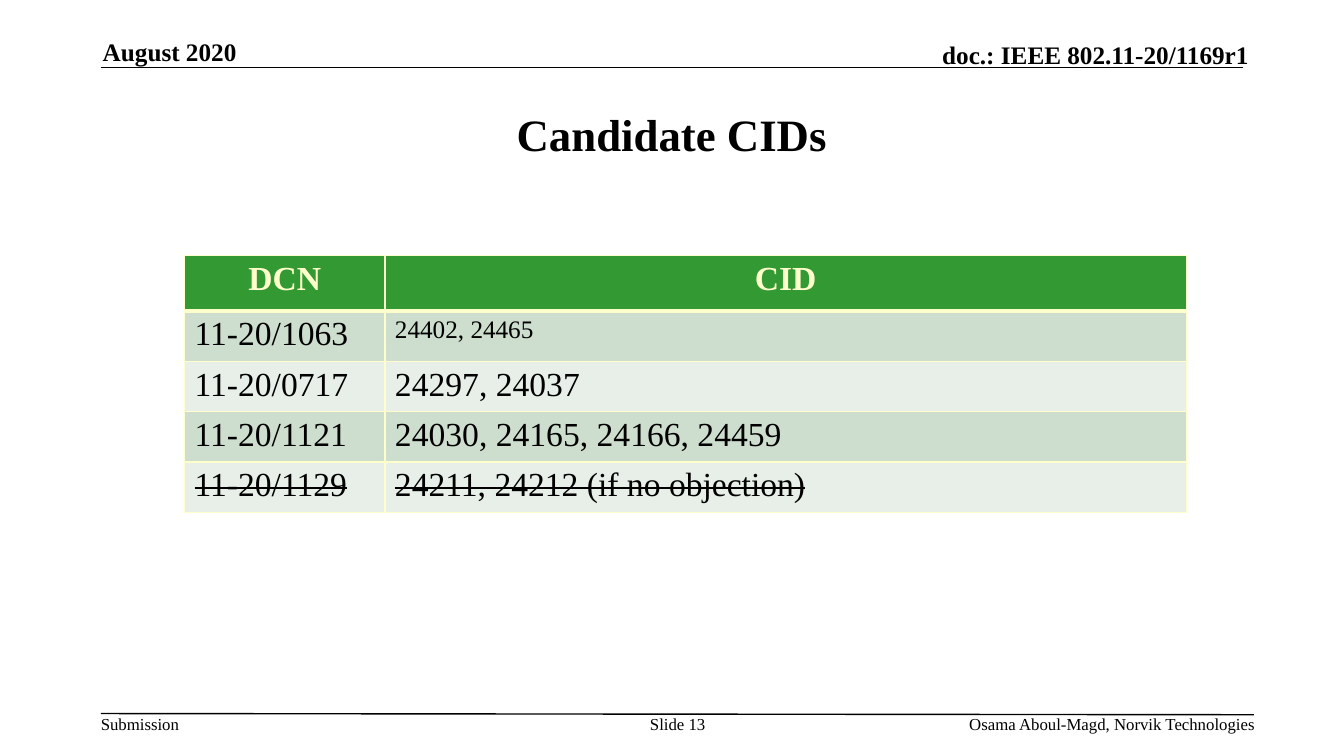
"""Build the slide that lists the candidate CIDs."""
from dataclasses import dataclass

from lxml.etree import SubElement
from pptx import Presentation
from pptx.dml.color import RGBColor
from pptx.enum.shapes import MSO_CONNECTOR
from pptx.enum.text import MSO_ANCHOR as Anchor, PP_ALIGN as Align
from pptx.oxml.ns import qn
from pptx.slide import Slide
from pptx.table import _Cell as Cell
from pptx.util import Cm, Pt

BLACK = RGBColor(0x00, 0x00, 0x00)
CREAM = RGBColor(0xFF, 0xFF, 0xCC)
GREEN = RGBColor(0x33, 0x99, 0x33)
BANDS = (RGBColor(0xCE, 0xDE, 0xCE), RGBColor(0xE8, 0xEF, 0xE8))
FONT = "Times New Roman"


@dataclass(frozen=True)
class Label:
    text: str
    left: float
    top: float
    width: float
    height: float
    size: int = 12
    bold: bool = False
    align: Align = Align.LEFT
    anchor: Anchor = Anchor.TOP


@dataclass(frozen=True)
class Rule:
    left: float
    top: float
    right: float
    bottom: float


@dataclass(frozen=True)
class Candidate:
    dcn: str
    cids: str
    cids_size: int = 24
    struck: bool = False


LABELS = (
    Label("August 2020", 2.59, 0.91, 6.93, 0.76, 18, True, anchor=Anchor.BOTTOM),
    Label("doc.: IEEE 802.11-20/1169r1", 18.52, 0.99, 12.95, 0.76, 18, True,
          Align.RIGHT, Anchor.BOTTOM),
    Label("Submission", 2.54, 17.98, 2.5, 0.51),
    Label("Slide 13", 16.1, 17.98, 1.96, 1.02, align=Align.CENTER),
    Label("Osama Aboul-Magd, Norvik Technologies", 19.84, 17.98, 11.79, 0.51,
          align=Align.RIGHT),
)
RULES = (Rule(2.54, 1.7, 31.32, 1.7), Rule(2.54, 17.98, 31.6, 18.01))
CANDIDATES = (
    Candidate("11-20/1063", "24402, 24465", 18),
    Candidate("11-20/0717", "24297, 24037"),
    Candidate("11-20/1121", "24030, 24165, 24166, 24459"),
    Candidate("11-20/1129", "24211, 24212 (if no objection)", struck=True),
)


def write(frame, text: str, size: int, color: RGBColor = BLACK,
          bold: bool = False, align: Align = Align.LEFT) -> None:
    frame.text = text
    paragraph = frame.paragraphs[0]
    paragraph.alignment = align
    font = paragraph.font
    font.name, font.size, font.bold = FONT, Pt(size), bold
    font.color.rgb = color


def add_label(slide: Slide, label: Label) -> None:
    box = slide.shapes.add_textbox(Cm(label.left), Cm(label.top),
                                   Cm(label.width), Cm(label.height))
    frame = box.text_frame
    frame.word_wrap = True
    frame.vertical_anchor = label.anchor
    frame.margin_left = frame.margin_right = 0
    frame.margin_top = frame.margin_bottom = 0
    write(frame, label.text, label.size, bold=label.bold, align=label.align)


def add_rule(slide: Slide, rule: Rule) -> None:
    line = slide.shapes.add_connector(MSO_CONNECTOR.STRAIGHT, Cm(rule.left), Cm(rule.top),
                                      Cm(rule.right), Cm(rule.bottom))
    line.line.color.rgb = BLACK
    line.line.width = Pt(1)
    SubElement(line._element.spPr, qn("a:effectLst"))


def paint_cell(cell: Cell, fill: RGBColor, top: int = 1, bottom: int = 1) -> None:
    properties = cell._tc.get_or_add_tcPr()
    for side, width in (("L", 1), ("R", 1), ("T", top), ("B", bottom)):
        border = SubElement(properties, qn(f"a:ln{side}"), w=str(Pt(width)))
        SubElement(SubElement(border, qn("a:solidFill")), qn("a:srgbClr"), val=str(CREAM))
    cell.fill.solid()
    cell.fill.fore_color.rgb = fill


def add_candidates(slide: Slide) -> None:
    table = slide.shapes.add_table(len(CANDIDATES) + 1, 2, Cm(4.65), Cm(6.43),
                                   Cm(25.25), Cm(5.56)).table
    table.first_row = table.horz_banding = False
    for column, width in zip(table.columns, (5.05, 20.2)):
        column.width = Cm(width)
    for index, row in enumerate(table.rows):
        row.height = Cm(1.04 if index else 1.4)
    for column, heading in enumerate(("DCN", "CID")):
        cell = table.cell(0, column)
        paint_cell(cell, GREEN, bottom=3)
        write(cell.text_frame, heading, 24, CREAM, True, Align.CENTER)
    for row, candidate in enumerate(CANDIDATES, start=1):
        entries = ((candidate.dcn, 24), (candidate.cids, candidate.cids_size))
        for column, (text, size) in enumerate(entries):
            cell = table.cell(row, column)
            paint_cell(cell, BANDS[(row - 1) % 2], top=3 if row == 1 else 1)
            write(cell.text_frame, text, size)
            if candidate.struck:
                run = cell.text_frame.paragraphs[0].runs[0]
                run._r.get_or_add_rPr().set("strike", "sngStrike")


def main() -> None:
    deck = Presentation()
    deck.slide_width, deck.slide_height = Cm(33.87), Cm(19.05)
    slide = deck.slides.add_slide(deck.slide_layouts[5])
    title = slide.shapes.title
    title.left, title.top, title.width, title.height = Cm(2.54), Cm(1.9), Cm(28.78), Cm(2.95)
    title.text_frame.vertical_anchor = Anchor.MIDDLE
    write(title.text_frame, "Candidate CIDs", 32, bold=True, align=Align.CENTER)
    for rule in RULES:
        add_rule(slide, rule)
    for label in LABELS:
        add_label(slide, label)
    add_candidates(slide)
    deck.save("out.pptx")


if __name__ == "__main__":
    main()
